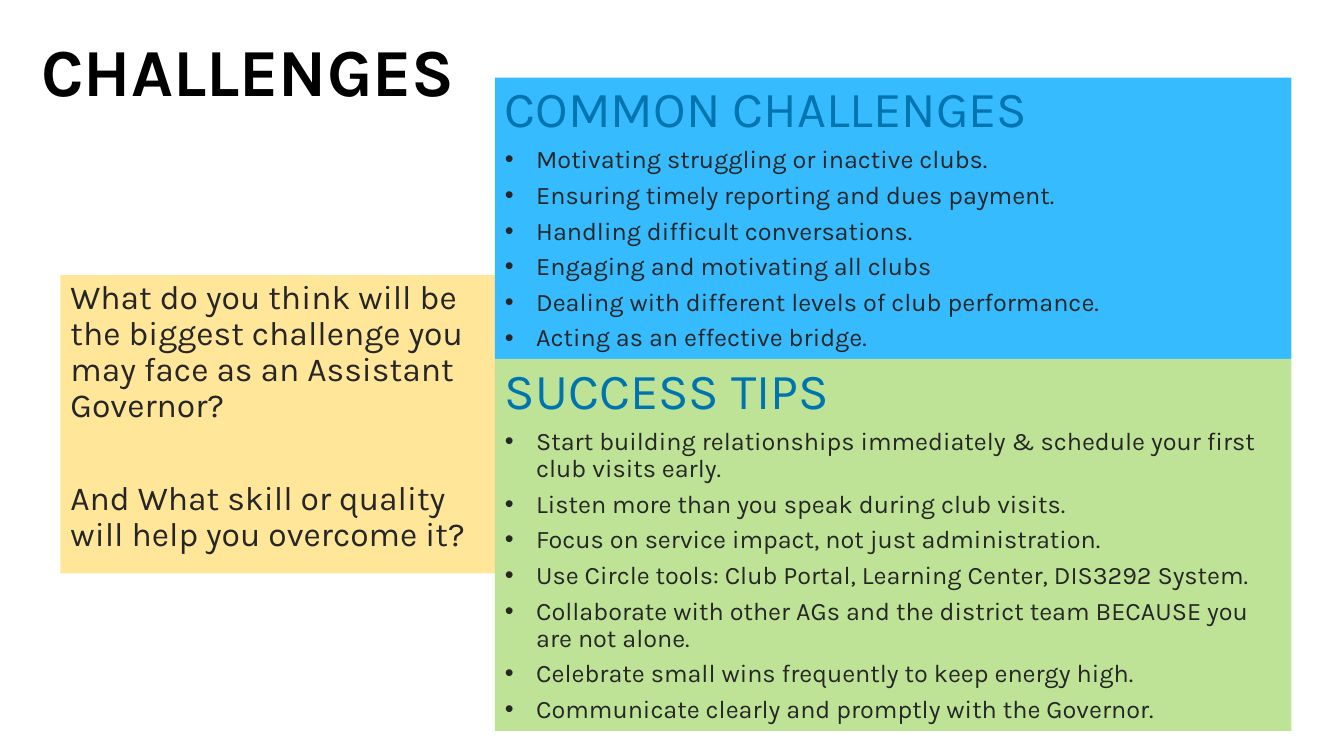
from dataclasses import dataclass

from lxml.etree import SubElement
from pptx import Presentation
from pptx.dml.color import RGBColor
from pptx.enum.shapes import MSO_SHAPE
from pptx.enum.text import MSO_ANCHOR, PP_ALIGN
from pptx.oxml.ns import qn
from pptx.util import Inches, Pt


@dataclass(frozen=True)
class Theme:
    font: str = "Karla"
    black: str = "000000"
    ink: str = "262626"
    heading: str = "0074AF"
    yellow: str = "FFE699"
    blue: str = "36BBFF"
    green: str = "BEE396"
    title_size: int = 48
    heading_size: int = 36
    question_size: int = 24
    bullet_size: int = 18


THEME = Theme()
BULLET_INDENT = Inches(0.31)

QUESTIONS = [
    "What do you think will be the biggest challenge you may face as an Assistant Governor?",
    "And What skill or quality will help you overcome it?",
]
CHALLENGES = [
    "Motivating struggling or inactive clubs.",
    "Ensuring timely reporting and dues payment.",
    "Handling difficult conversations.",
    "Engaging and motivating all clubs",
    "Dealing with different levels of club performance.",
    "Acting as an effective bridge.",
]
TIPS = [
    "Start building relationships immediately & schedule your first club visits early.",
    "Listen more than you speak during club visits.",
    "Focus on service impact, not just administration.",
    "Use Circle tools: Club Portal, Learning Center, DIS3292 System.",
    "Collaborate with other AGs and the district team BECAUSE you are not alone.",
    "Celebrate small wins frequently to keep energy high.",
    "Communicate clearly and promptly with the Governor.",
]


def add_bullet(para):
    properties = para._p.get_or_add_pPr()
    properties.set("marL", str(BULLET_INDENT))
    properties.set("indent", str(-BULLET_INDENT))
    SubElement(properties, qn("a:buFont")).set("typeface", "Arial")
    SubElement(properties, qn("a:buChar")).set("char", "•")


def write_paragraph(para, text, size, color, after=0, bold=False, bullet=False):
    para.text = text
    if bullet:
        add_bullet(para)
    para.alignment = PP_ALIGN.LEFT
    para.line_spacing = 0.9
    para.space_before = Pt(0)
    para.space_after = Pt(after)
    for span in para.runs:
        span.font.name = THEME.font
        span.font.size = Pt(size)
        span.font.bold = bold
        span.font.color.rgb = RGBColor.from_string(color)


def add_title(page, text):
    box = page.shapes.add_textbox(Inches(0.31), Inches(0.33), Inches(5.32), Inches(0.86))
    box.text_frame.word_wrap = True
    write_paragraph(box.text_frame.paragraphs[0], text, THEME.title_size, THEME.black, bold=True)


def add_panel(page, left, top, width, height, fill, anchor):
    panel = page.shapes.add_shape(
        MSO_SHAPE.RECTANGLE, Inches(left), Inches(top), Inches(width), Inches(height)
    )
    panel.shadow.inherit = False
    panel.fill.solid()
    panel.fill.fore_color.rgb = RGBColor.from_string(fill)
    panel.line.fill.background()
    panel.text_frame.word_wrap = True
    panel.text_frame.vertical_anchor = anchor
    return panel.text_frame


def add_question_panel(page):
    frame = add_panel(page, 0.6, 2.73, 4.31, 2.96, THEME.yellow, MSO_ANCHOR.TOP)
    first, second = QUESTIONS
    write_paragraph(frame.paragraphs[0], first, THEME.question_size, THEME.ink, after=40)
    write_paragraph(frame.add_paragraph(), second, THEME.question_size, THEME.ink, after=12)


def add_list_panel(page, top, height, fill, heading, items):
    frame = add_panel(page, 4.91, top, 7.9, height, fill, MSO_ANCHOR.MIDDLE)
    write_paragraph(frame.paragraphs[0], heading, THEME.heading_size, THEME.heading, after=6)
    for item in items:
        write_paragraph(
            frame.add_paragraph(), item, THEME.bullet_size, THEME.ink, after=6, bullet=True
        )


def main():
    deck = Presentation()
    deck.slide_width, deck.slide_height = Inches(13.33), Inches(7.5)
    page = deck.slides.add_slide(deck.slide_layouts[6])

    # Title and discussion questions
    add_title(page, "CHALLENGES")
    add_question_panel(page)

    # Stacked lists on the right
    add_list_panel(page, 0.77, 2.79, THEME.blue, "COMMON CHALLENGES", CHALLENGES)
    add_list_panel(page, 3.56, 3.69, THEME.green, "SUCCESS TIPS", TIPS)

    deck.save("out.pptx")


if __name__ == "__main__":
    main()
